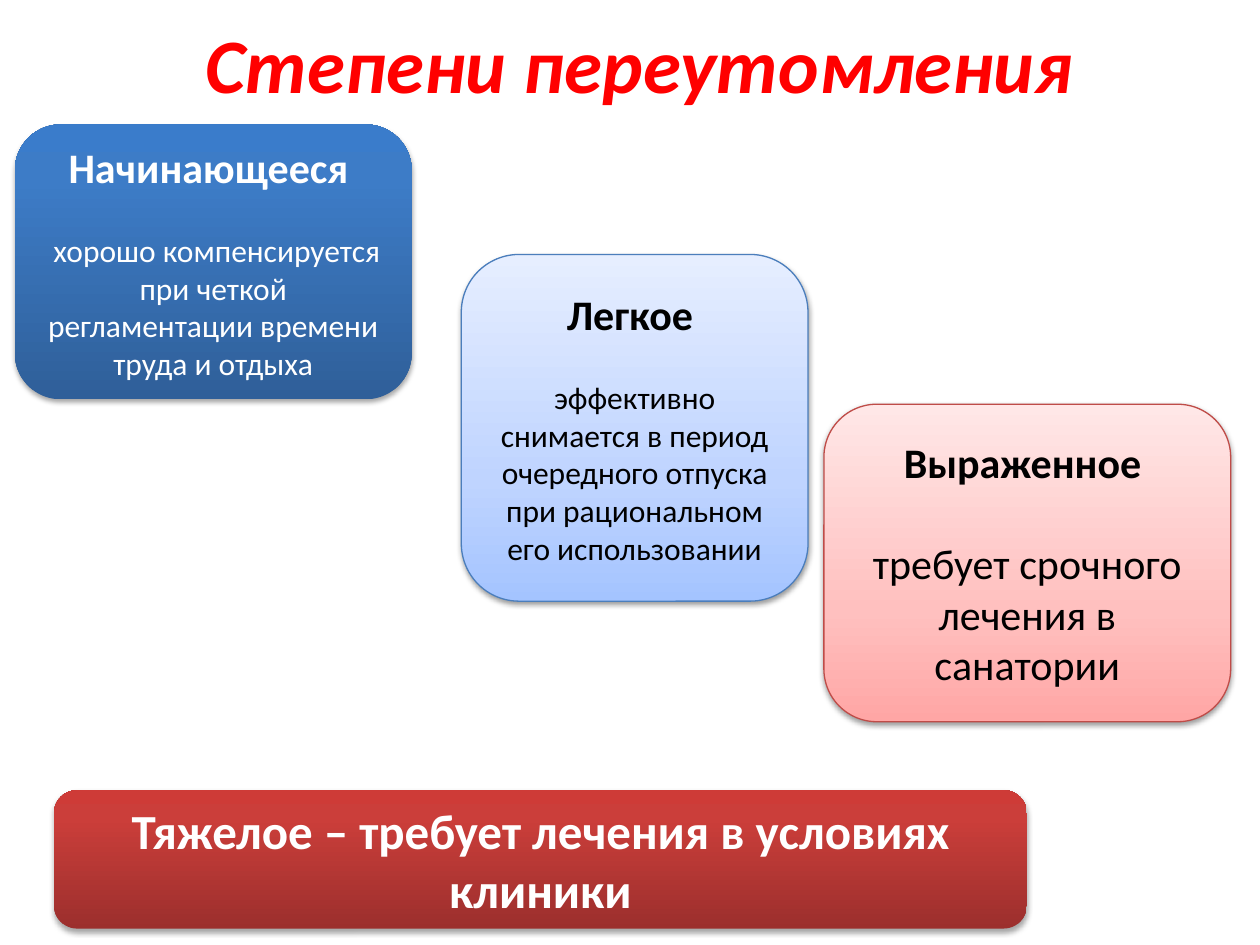
import copy

import pptx
import pptx.dml.color
import pptx.enum.shapes
import pptx.enum.text
import pptx.oxml
import pptx.oxml.ns
import pptx.util
from pptx.util import Cm

RGBColor = pptx.dml.color.RGBColor
RED = RGBColor(0xFF, 0x00, 0x00)
WHITE = RGBColor(0xFF, 0xFF, 0xFF)
BLACK = RGBColor(0x00, 0x00, 0x00)
BLUE_LINE = RGBColor(0x4B, 0x7E, 0xBC)
RED_LINE = RGBColor(0xBF, 0x4C, 0x48)

# Gradient stops run from the bottom of a card to its top.
DEEP_BLUE = [(0, RGBColor(0x2F, 0x5F, 0x99)), (0.8, RGBColor(0x3D, 0x7C, 0xC7)),
             (1, RGBColor(0x3A, 0x7C, 0xCB))]
PALE_BLUE = [(0, RGBColor(0xA4, 0xC4, 0xFF)), (0.35, RGBColor(0xBF, 0xD4, 0xFF)),
             (1, RGBColor(0xE6, 0xEE, 0xFF))]
PALE_RED = [(0, RGBColor(0xFF, 0xA6, 0xA5)), (0.35, RGBColor(0xFF, 0xC0, 0xBF)),
            (1, RGBColor(0xFF, 0xE7, 0xE7))]
DEEP_RED = [(0, RGBColor(0x9C, 0x2F, 0x2D)), (0.8, RGBColor(0xCB, 0x3E, 0x3A)),
            (1, RGBColor(0xCE, 0x3B, 0x37))]


class SlideBuilder:
    font_name = "Calibri"

    def __init__(self, slide):
        self.slide = slide

    def set_text(self, shape, lines, color):
        """Fill a shape with (text, size, space before, font formats) lines."""
        frame = shape.text_frame
        frame.word_wrap = True
        frame.vertical_anchor = pptx.enum.text.MSO_ANCHOR.MIDDLE
        for index, (text, size, gap, formats) in enumerate(lines):
            paragraph = frame.add_paragraph() if index else frame.paragraphs[0]
            paragraph.alignment = pptx.enum.text.PP_ALIGN.CENTER
            paragraph.space_before = pptx.util.Pt(gap)
            run = paragraph.add_run()
            run.text = text
            values = {"name": self.font_name, "size": pptx.util.Pt(size), **formats}
            for name, value in values.items():
                setattr(run.font, name, value)
            run.font.color.rgb = color

    def title(self, box, text):
        shape = self.slide.shapes.add_textbox(*map(Cm, box))
        self.set_text(shape, [(text, 44, 0, {"bold": True, "italic": True})], RED)

    def card(self, box, stops, lines, color, outline=None):
        shape = self.slide.shapes.add_shape(
            pptx.enum.shapes.MSO_SHAPE.ROUNDED_RECTANGLE, *map(Cm, box))
        self.gradient(shape, stops)
        if outline is None:
            shape.line.fill.background()
            self.shadow(shape, distance=1.8, opacity=35)
        else:
            shape.line.color.rgb = outline
            shape.line.width = pptx.util.Pt(0.75)
            self.shadow(shape, distance=1.6, opacity=38)
        self.set_text(shape, lines, color)

    def gradient(self, shape, stops):
        shape.fill.gradient()
        shape.fill.gradient_angle = 90
        stop_list = next(shape._element.spPr.iter(pptx.oxml.ns.qn("a:gsLst")))
        stop_list.append(copy.deepcopy(stop_list[-1]))
        for stop, (position, color) in zip(shape.fill.gradient_stops, stops):
            stop.position = position
            stop.color.rgb = color

    def shadow(self, shape, distance, opacity):
        """Cast a soft black shadow straight down."""
        shape.shadow.inherit = False
        effects = shape._element.spPr.find(pptx.oxml.ns.qn("a:effectLst"))
        effects.append(pptx.oxml.parse_xml(
            f'<a:outerShdw {pptx.oxml.ns.nsdecls("a")} blurRad="{pptx.util.Pt(3.1)}" '
            f'dist="{pptx.util.Pt(distance)}" dir="5400000" rotWithShape="0">'
            f'<a:srgbClr val="{BLACK}"><a:alpha val="{opacity * 1000}"/></a:srgbClr>'
            '</a:outerShdw>'))


def degree(heading, description, size, gap):
    return [(heading, 24, 0, {"bold": True}), (description, size, gap, {"bold": False})]


def main():
    presentation = pptx.Presentation()
    presentation.slide_width = Cm(25.4)
    presentation.slide_height = Cm(19.05)
    builder = SlideBuilder(presentation.slides.add_slide(presentation.slide_layouts[6]))

    builder.title((1.47, 0.15, 22.86, 2.21), "Степени переутомления")
    builder.card(
        (0.3, 2.51, 8, 5.54), DEEP_BLUE,
        degree("Начинающееся ",
               " хорошо компенсируется при четкой регламентации времени труда и отдыха",
               18, 22),
        WHITE)
    builder.card(
        (9.3, 5.13, 6.99, 6.99), PALE_BLUE,
        degree("Легкое ",
               "эффективно снимается в период очередного отпуска "
               "при рациональном его использовании",
               18, 22),
        BLACK, BLUE_LINE)
    builder.card(
        (16.61, 8.15, 8.2, 6.4), PALE_RED,
        degree("Выраженное ", "требует срочного лечения в санатории", 24, 29),
        BLACK, RED_LINE)
    builder.card(
        (1.09, 15.93, 19.61, 2.79), DEEP_RED,
        [("Тяжелое – требует лечения в условиях клиники", 28, 0, {"bold": True})],
        WHITE)
    presentation.save("out.pptx")


if __name__ == "__main__":
    main()
